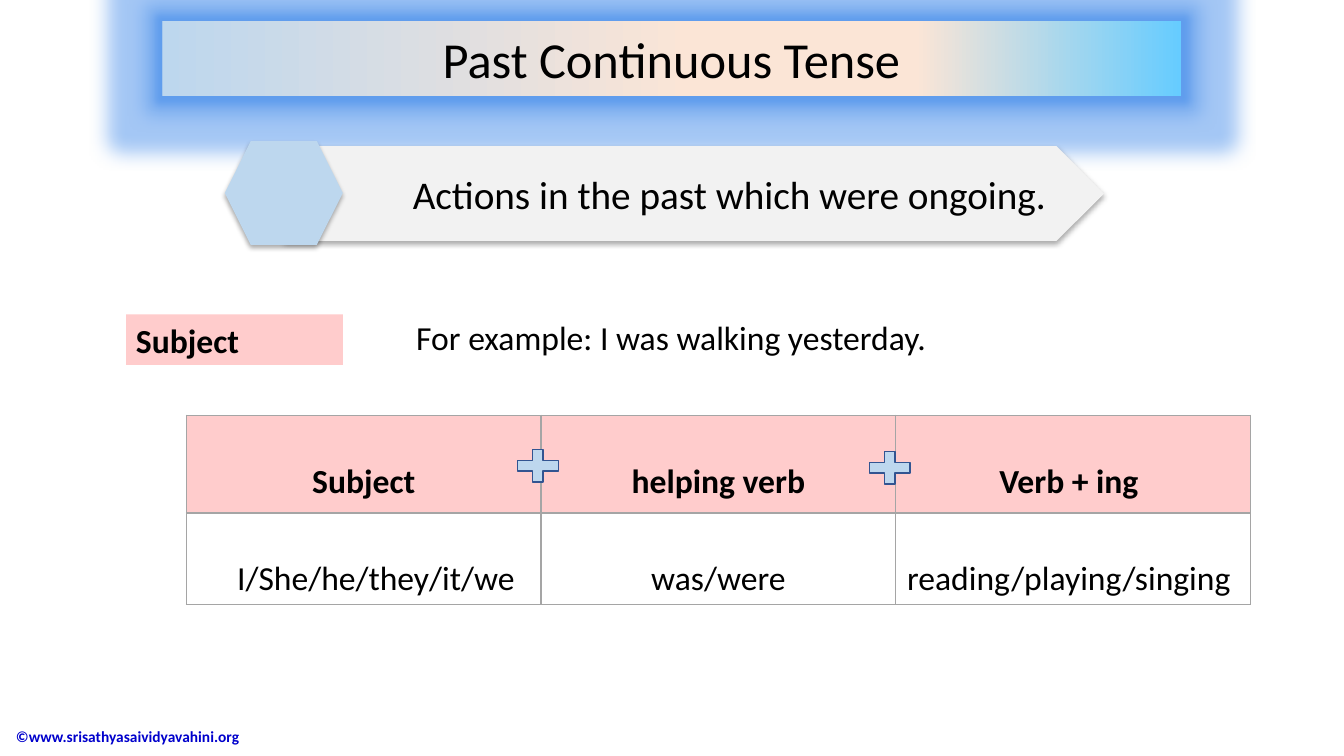
"""Builds a grammar slide about the past continuous tense."""
import pptx
import pptx.dml.color
import pptx.enum.shapes
import pptx.enum.text
import pptx.oxml
import pptx.oxml.ns
import pptx.util
from dataclasses import dataclass

Inches = pptx.util.Inches
Pt = pptx.util.Pt
Shape = pptx.enum.shapes.MSO_SHAPE
Align = pptx.enum.text.PP_ALIGN
Anchor = pptx.enum.text.MSO_ANCHOR


@dataclass(frozen=True)
class Theme:
    font: str = "Calibri"
    ink: str = "000000"
    footer: str = "0000CC"
    white: str = "FFFFFF"
    pink: str = "FFCCCC"
    blue: str = "BDD7EE"
    grey: str = "F2F2F2"
    outline: str = "325491"
    border: str = "A5A5A5"
    glow: str = "4A90EB"
    banner: tuple = ((0, "BDD7EE"), (52, "FBE5D6"), (74, "FBE5D6"), (100, "66CCFF"))
    title_size: int = 36
    lead_size: int = 28
    body_size: int = 24
    footer_size: int = 11


def rgb(value):
    return pptx.dml.color.RGBColor.from_string(value)


def add_xml(parent, tag, content):
    namespace = pptx.oxml.ns.nsdecls("a")
    parent.append(pptx.oxml.parse_xml(f"<a:{tag} {namespace}>{content}</a:{tag}>"))


def color_xml(value, opacity=100):
    return f'<a:srgbClr val="{value}"><a:alpha val="{opacity * 1000}"/></a:srgbClr>'


def format_text(frame, text, *, font, size, color, bold=False, align=Align.LEFT,
                anchor=Anchor.MIDDLE, spacing=None):
    frame.word_wrap = True
    frame.vertical_anchor = anchor
    para = frame.paragraphs[0]
    para.alignment = align
    para.line_spacing = spacing
    span = para.add_run()
    span.text = text
    span.font.name = font
    span.font.size = Pt(size)
    span.font.bold = bold
    span.font.color.rgb = rgb(color)


class SlideBuilder:
    def __init__(self, deck, theme):
        self.theme = theme
        self.slide = deck.slides.add_slide(deck.slide_layouts[5])

    def put_text(self, frame, text, **style):
        defaults = dict(font=self.theme.font, size=self.theme.body_size, color=self.theme.ink)
        format_text(frame, text, **(defaults | style))

    def text(self, place, text, **style):
        box = self.slide.shapes.add_textbox(*map(Inches, place))
        self.put_text(box.text_frame, text, **style)

    def shape(self, kind, place, fill, line=None, raised=False):
        box = self.slide.shapes.add_shape(kind, *map(Inches, place))
        box.fill.solid()
        box.fill.fore_color.rgb = rgb(fill)
        if line:
            box.line.color.rgb = rgb(line)
            box.line.width = Pt(1)
        else:
            box.line.fill.background()
        if raised:
            add_xml(box.element.spPr, "effectLst",
                    f'<a:outerShdw blurRad="{Pt(3.5)}" dist="{Pt(2.2)}" dir="5400000">'
                    f'{color_xml(self.theme.ink, 32)}</a:outerShdw>')
        else:
            box.shadow.inherit = False
        return box

    def glow(self, box, radius):
        properties = box.element.spPr
        for effects in properties.findall(pptx.oxml.ns.qn("a:effectLst")):
            properties.remove(effects)
        add_xml(properties, "effectLst",
                f'<a:glow rad="{Pt(radius)}">{color_xml(self.theme.glow, 50)}</a:glow>')

    def title(self, place, text):
        title = self.slide.shapes.title
        title.left, title.top, title.width, title.height = map(Inches, place)
        stops = "".join(f'<a:gs pos="{position * 1000}">{color_xml(color)}</a:gs>'
                        for position, color in self.theme.banner)
        add_xml(title.element.spPr, "gradFill",
                f'<a:gsLst>{stops}</a:gsLst><a:lin ang="0" scaled="0"/>')
        self.glow(title, 11)
        halo = self.shape(Shape.RECTANGLE, place, self.theme.blue)
        self.glow(halo, 27)
        title.element.addprevious(halo.element)
        self.put_text(title.text_frame, text, size=self.theme.title_size, align=Align.CENTER)

    def border(self, cell, bottom):
        properties = cell._tc.get_or_add_tcPr()
        for side, width in (("L", 1), ("R", 1), ("T", 1), ("B", bottom)):
            add_xml(properties, f"ln{side}",
                    f"<a:solidFill>{color_xml(self.theme.border)}</a:solidFill>")
            properties[-1].set("w", str(Pt(width)))

    def table(self, place, rows, heights, margins):
        frame = self.slide.shapes.add_table(len(rows), len(rows[0]), *map(Inches, place))
        table = frame.table
        table.first_row = table.horz_banding = False
        for column in table.columns:
            column.width = Inches(place[2] / len(rows[0]))
        for r, (texts, height) in enumerate(zip(rows, heights)):
            table.rows[r].height = Inches(height)
            header = r == 0
            for c, text in enumerate(texts):
                cell = table.cell(r, c)
                left, right = margins.get((r, c), (0.1, 0.1))
                cell.margin_left, cell.margin_right = Inches(left), Inches(right)
                self.border(cell, 2 if header else 1)
                cell.fill.solid()
                cell.fill.fore_color.rgb = rgb(self.theme.pink if header else self.theme.white)
                self.put_text(cell.text_frame, text, bold=header, align=Align.CENTER,
                              anchor=Anchor.TOP, spacing=2.0)


def main():
    theme = Theme()
    deck = pptx.Presentation()
    deck.slide_width, deck.slide_height = Inches(13.33), Inches(7.5)
    page = SlideBuilder(deck, theme)

    page.title((1.61, 0.21, 10.1, 0.74), "Past Continuous Tense")
    page.text((0.06, 7.1, 3.53, 0.41), "©www.srisathyasaividyavahini.org",
              size=theme.footer_size, color=theme.footer, bold=True)
    page.text((4.03, 3.09, 8.58, 0.5), "For example: I was walking yesterday.")
    page.table((1.85, 4.12, 10.55, 1.88),
               [("Subject", "helping verb", "Verb + ing"),
                ("I/She/he/they/it/we", "was/were", "reading/playing/singing")],
               heights=(0.97, 0.91),
               margins={(1, 0): (0.34, 0.1), (0, 2): (0.05, 0.13), (1, 2): (0.05, 0.13)})

    arrow = page.shape(Shape.PENTAGON, (2.82, 1.45, 8.13, 0.94), theme.grey, raised=True)
    arrow.text_frame.margin_left = Inches(1.03)
    page.put_text(arrow.text_frame, "Actions in the past which were ongoing.",
                  size=theme.lead_size, align=Align.CENTER)
    page.shape(Shape.HEXAGON, (2.23, 1.4, 1.17, 1.03), theme.blue, raised=True)
    for left, top in ((8.55, 4.42), (5.06, 4.4)):
        page.shape(Shape.MATH_PLUS, (left, top, 0.55, 0.44), theme.blue, line=theme.outline)
    label = page.shape(Shape.RECTANGLE, (1.25, 3.12, 2.15, 0.5), theme.pink)
    page.put_text(label.text_frame, "Subject", bold=True)

    deck.save("out.pptx")


if __name__ == "__main__":
    main()
